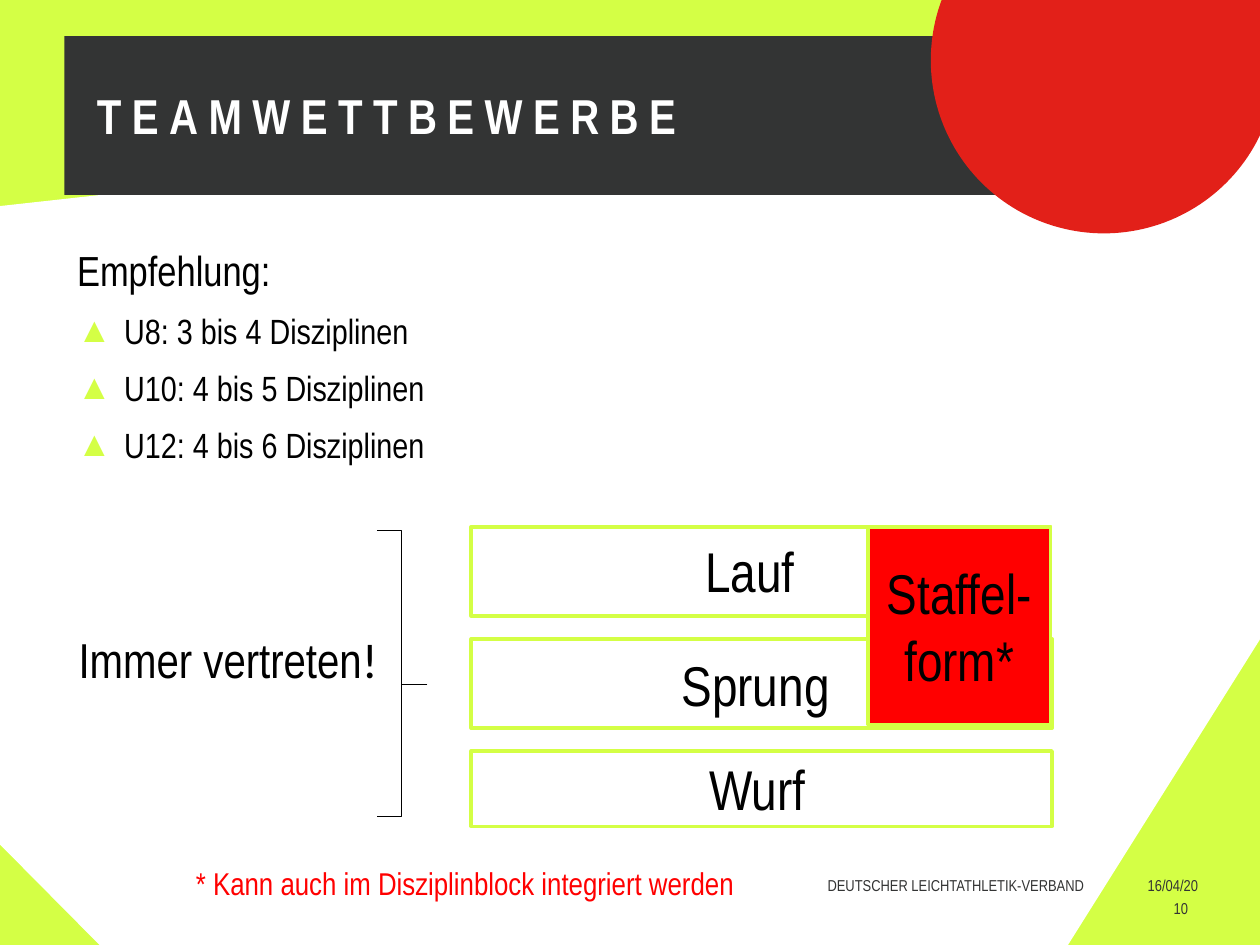
from dataclasses import dataclass

from lxml import etree
from pptx import Presentation
from pptx import util as u
from pptx.dml.color import RGBColor
from pptx.enum import shapes, text
from pptx.oxml.ns import qn

LIME, RED, DARK, WHITE, BLACK = "D4FF45", "E22019", "333434", "FFFFFF", "000000"
FONT = "Arial Narrow"
KIND = shapes.MSO_SHAPE
LEFT, MID, RIGHT = text.PP_ALIGN.LEFT, text.PP_ALIGN.CENTER, text.PP_ALIGN.RIGHT


@dataclass
class Box:
    """A frame on the slide, in centimetres."""
    x: float
    y: float
    w: float
    h: float

    def lengths(self):
        return [u.Cm(v) for v in (self.x, self.y, self.w, self.h)]


@dataclass
class Row:
    name: str
    width: float
    height: float
    label: Box


def paint(color, hue: str):
    color.rgb = RGBColor.from_string(hue)


def write(par, words: str, size=18, color=BLACK, font=FONT, bold=False,
          align=LEFT, track=0):
    par.alignment = align
    run = par.add_run()
    run.text = words
    run.font.size, run.font.name, run.font.bold = u.Pt(size), font, bold
    paint(run.font.color, color)
    if track:
        run._r.get_or_add_rPr().set("spc", str(track * 100))
    return run


def draw(slide, kind, box: Box, fill=None, line=None, width=2):
    shape = slide.shapes.add_shape(kind, *box.lengths())
    shape.shadow.inherit = False
    if fill:
        shape.fill.solid()
        paint(shape.fill.fore_color, fill)
    else:
        shape.fill.background()
    if line:
        paint(shape.line.color, line)
        shape.line.width = u.Pt(width)
    else:
        shape.line.fill.background()
    return shape


def label(slide, box: Box, words: str, **style):
    frame = slide.shapes.add_textbox(*box.lengths()).text_frame
    frame.word_wrap = True
    write(frame.paragraphs[0], words, **style)
    return frame.paragraphs[0]


def place(slide, holder, box: Box, anchor):
    """Move a placeholder to its frame and in front of what is drawn so far."""
    holder.left, holder.top, holder.width, holder.height = box.lengths()
    slide.shapes._spTree.append(holder._element)
    frame = holder.text_frame
    frame.word_wrap = True
    frame.auto_size = text.MSO_AUTO_SIZE.NONE
    frame.vertical_anchor = anchor
    return frame


def mark(par, sign="", hang=0.0):
    """Give a paragraph a lime bullet, or none if there is no sign."""
    props = par._p.get_or_add_pPr()
    props.set("marL", str(u.Cm(hang)))
    props.set("indent", str(-u.Cm(hang)))
    if not sign:
        etree.SubElement(props, qn("a:buNone"))
        return
    hue = etree.SubElement(props, qn("a:buClr"))
    etree.SubElement(hue, qn("a:srgbClr"), val=LIME)
    etree.SubElement(props, qn("a:buFont"), typeface="Arial")
    etree.SubElement(props, qn("a:buChar"), char=sign)


def backdrop(slide):
    draw(slide, KIND.RECTANGLE, Box(0, 0, 25.4, 19.05), LIME)
    field = draw(slide, KIND.ISOSCELES_TRIANGLE,
                 Box(-10.08, 2.87, 44.96, 28.32), WHITE)
    field.rotation = 173.7
    draw(slide, KIND.RECTANGLE, Box(1.3, 0.73, 19.4, 3.2), DARK)
    draw(slide, KIND.OVAL, Box(18.8, -2.24, 6.91, 6.91), RED, RED)
    for box, words in ((Box(14.1, 17.48, 8, 0.66),
                        "DEUTSCHER LEICHTATHLETIK-VERBAND"),
                       (Box(22.2, 17.48, 2.2, 0.66), "16/04/20"),
                       (Box(22.2, 17.93, 2, 0.66), "10")):
        par = label(slide, box, words, size=9, color=DARK, align=RIGHT)
        par.line_spacing = 1.15


def advice(slide):
    frame = place(slide, slide.placeholders[1], Box(1.3, 4.8, 11.02, 4.75),
                  text.MSO_ANCHOR.TOP)
    head = frame.paragraphs[0]
    mark(head)
    head.space_before = u.Pt(0)
    write(head, "Empfehlung:", size=24)
    for words in ("U8: 3 bis 4 Disziplinen", "U10: 4 bis 5 Disziplinen",
                  "U12: 4 bis 6 Disziplinen"):
        par = frame.add_paragraph()
        mark(par, "▲", 0.95)
        par.line_spacing, par.space_before = 1.15, u.Pt(5)
        write(par, words, size=20)


def events(slide):
    left, top, pitch = 9.5, 10.62, 2.26
    rows = (Row("Lauf", 11.68, 1.8, Box(13.97, 10.69, 3.25, 1.63)),
            Row("Sprung", 11.71, 1.8, Box(13.49, 12.98, 3.73, 1.63)),
            Row("Wurf", 11.71, 1.52, Box(14.05, 15.09, 3.25, 1.63)))
    for i, row in enumerate(rows):
        draw(slide, KIND.RECTANGLE,
             Box(left, top + i * pitch, row.width, row.height), WHITE, LIME)
    for row in rows:
        label(slide, row.label, row.name, size=32)

    relay = draw(slide, KIND.RECTANGLE, Box(17.5, top, 3.68, 3.99),
                 "FF0000", LIME)
    frame = relay.text_frame
    frame.word_wrap = True
    frame.vertical_anchor = text.MSO_ANCHOR.MIDDLE
    write(frame.paragraphs[0], "Staffel-form*", size=32, align=MID)

    brace = draw(slide, KIND.RIGHT_BRACE, Box(7.6, 10.69, 1, 5.77),
                 line=BLACK, width=0.75)
    brace.adjustments[0], brace.adjustments[1] = 0, 0.54
    par = label(slide, Box(0.5, 12.57, 8.2, 1.45), "Immer vertreten",
                size=28, align=MID)
    write(par, "!", size=28, font="Calibri", align=MID)


def main():
    deck = Presentation()
    deck.slide_width, deck.slide_height = u.Cm(25.4), u.Cm(19.05)
    slide = deck.slides.add_slide(deck.slide_layouts[1])
    backdrop(slide)
    title = place(slide, slide.shapes.title, Box(1.7, 0.73, 17.42, 3.18),
                  text.MSO_ANCHOR.MIDDLE)
    write(title.paragraphs[0], "TEAMWETTBEWERBE", size=28, color=WHITE,
          bold=True, track=6)
    events(slide)
    advice(slide)
    label(slide, Box(3.7, 17.3, 12.47, 1.02),
          "* Kann auch im Disziplinblock integriert werden", color="FF0000")
    deck.save("out.pptx")


if __name__ == "__main__":
    main()
